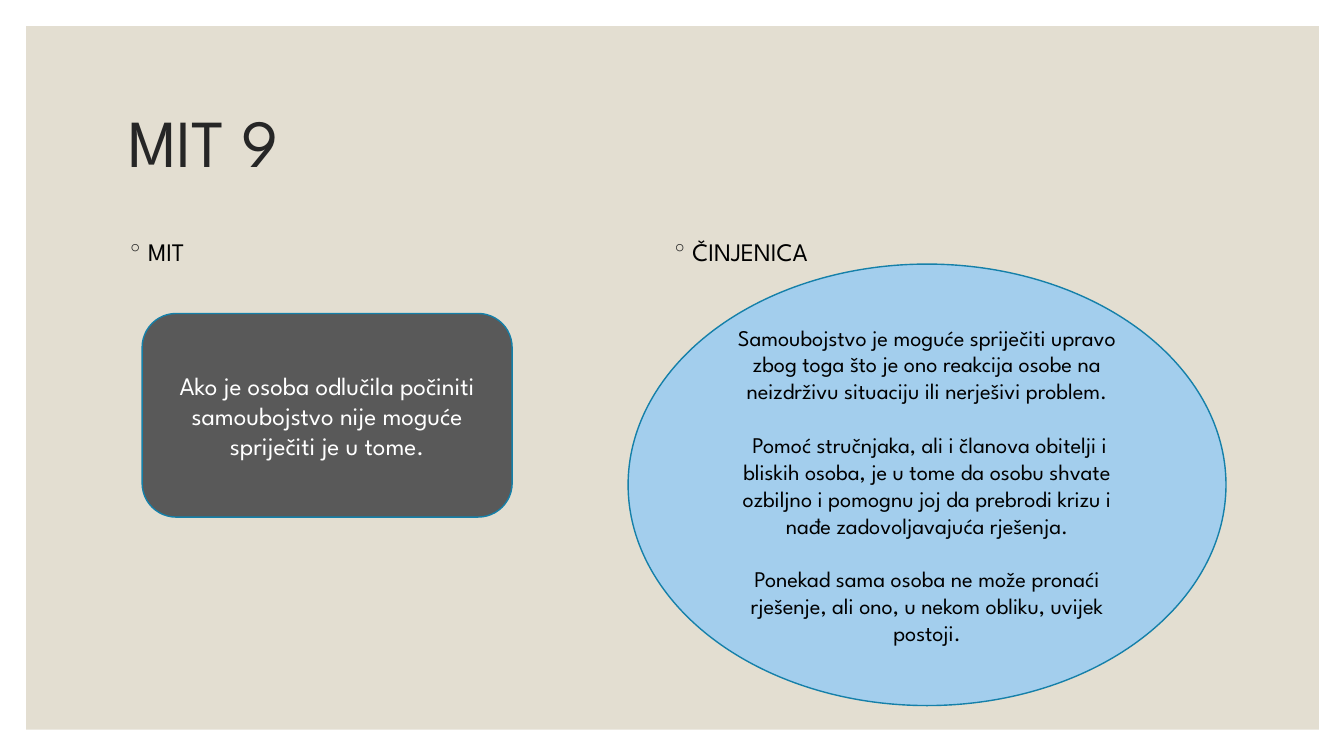
from dataclasses import dataclass

from lxml.etree import SubElement
from pptx import Presentation
from pptx.dml.color import RGBColor
from pptx.enum.shapes import MSO_SHAPE
from pptx.enum.text import MSO_ANCHOR, MSO_AUTO_SIZE, PP_ALIGN
from pptx.oxml.ns import qn
from pptx.shapes.autoshape import Shape
from pptx.slide import Slide
from pptx.text.text import TextFrame
from pptx.util import Inches, Pt

FONT = "League Spartan"
BLACK = RGBColor(0x00, 0x00, 0x00)
WHITE = RGBColor(0xFF, 0xFF, 0xFF)
CHARCOAL = RGBColor(0x26, 0x26, 0x26)
GREY = RGBColor(0x59, 0x59, 0x59)
SAND = RGBColor(0xE3, 0xDE, 0xD1)
SKY = RGBColor(0xA3, 0xCE, 0xED)
TEAL = RGBColor(0x15, 0x80, 0xA9)


@dataclass(frozen=True)
class Box:
    left: float
    top: float
    width: float
    height: float

    def lengths(self) -> tuple[Inches, Inches, Inches, Inches]:
        return (Inches(self.left), Inches(self.top),
                Inches(self.width), Inches(self.height))


@dataclass(frozen=True)
class Heading:
    text: str
    box: Box


@dataclass(frozen=True)
class Bubble:
    outline: MSO_SHAPE
    box: Box
    fill: RGBColor
    color: RGBColor
    size: float
    paragraphs: tuple[str, ...]


PANEL = Box(0.26, 0.26, 12.82, 6.98)
TITLE = Box(1.17, 0.7, 11, 1.5)
HEADINGS = (
    Heading("MIT", Box(1.17, 2.3, 5.4, 0.4)),
    Heading("ČINJENICA", Box(6.57, 2.3, 5.4, 0.4)),
)
BUBBLES = (
    Bubble(MSO_SHAPE.ROUNDED_RECTANGLE, Box(1.41, 3.11, 3.67, 2.02), GREY, WHITE, 18, (
        "Ako je osoba odlučila počiniti samoubojstvo nije moguće spriječiti je u tome.",
    )),
    Bubble(MSO_SHAPE.OVAL, Box(6.23, 2.62, 5.93, 4.38), SKY, BLACK, 16, (
        "Samoubojstvo je moguće spriječiti upravo zbog toga što je ono reakcija osobe "
        "na neizdrživu situaciju ili nerješivi problem.",
        " Pomoć stručnjaka, ali i članova obitelji i bliskih osoba, je u tome da osobu "
        "shvate ozbiljno i pomognu joj da prebrodi krizu i nađe zadovoljavajuća rješenja.",
        "Ponekad sama osoba ne može pronaći rješenje, ali ono, u nekom obliku, "
        "uvijek postoji.",
    )),
)


def format_runs(frame: TextFrame, size: float, color: RGBColor) -> None:
    for paragraph in frame.paragraphs:
        for run in paragraph.runs:
            run.font.name = FONT
            run.font.size = Pt(size)
            run.font.color.rgb = color


def add_filled_shape(slide: Slide, outline: MSO_SHAPE, box: Box, fill: RGBColor) -> Shape:
    shape = slide.shapes.add_shape(outline, *box.lengths())
    shape.shadow.inherit = False
    shape.fill.solid()
    shape.fill.fore_color.rgb = fill
    shape.line.fill.background()
    return shape


def add_title(slide: Slide, text: str) -> None:
    title = slide.shapes.title
    title.left, title.top, title.width, title.height = TITLE.lengths()
    frame = title.text_frame
    frame.text = text
    frame.auto_size = MSO_AUTO_SIZE.NONE
    frame.vertical_anchor = MSO_ANCHOR.MIDDLE
    frame.paragraphs[0].alignment = PP_ALIGN.LEFT
    frame.paragraphs[0].line_spacing = 0.9
    format_runs(frame, 48, CHARCOAL)


def add_heading(slide: Slide, heading: Heading) -> None:
    frame = slide.shapes.add_textbox(*heading.box.lengths()).text_frame
    frame.word_wrap = True
    frame.text = heading.text
    format_runs(frame, 18, BLACK)
    properties = frame.paragraphs[0]._p.get_or_add_pPr()
    properties.set("marL", str(Inches(0.2)))
    properties.set("indent", str(-Inches(0.2)))
    bullet_color = SubElement(properties, qn("a:buClr"))
    SubElement(bullet_color, qn("a:srgbClr"), val=str(CHARCOAL))
    SubElement(properties, qn("a:buFont"), typeface=FONT)
    SubElement(properties, qn("a:buChar"), char="◦")


def add_bubble(slide: Slide, bubble: Bubble) -> None:
    shape = add_filled_shape(slide, bubble.outline, bubble.box, bubble.fill)
    shape.line.color.rgb = TEAL
    shape.line.width = Pt(1)
    frame = shape.text_frame
    frame.word_wrap = True
    frame.vertical_anchor = MSO_ANCHOR.MIDDLE
    frame.text = "\n".join(bubble.paragraphs)
    for index, paragraph in enumerate(frame.paragraphs):
        paragraph.alignment = PP_ALIGN.CENTER
        if index:
            paragraph.space_before = Pt(1.2 * bubble.size)
    format_runs(frame, bubble.size, bubble.color)


def main() -> None:
    presentation = Presentation()
    presentation.slide_width = Inches(13.33)
    presentation.slide_height = Inches(7.5)
    slide = presentation.slides.add_slide(presentation.slide_layouts[5])
    slide.background.fill.solid()
    slide.background.fill.fore_color.rgb = WHITE

    panel = add_filled_shape(slide, MSO_SHAPE.RECTANGLE, PANEL, SAND)
    slide.shapes.title.element.addprevious(panel.element)
    add_title(slide, "MIT 9")
    for heading in HEADINGS:
        add_heading(slide, heading)
    for bubble in BUBBLES:
        add_bubble(slide, bubble)
    presentation.save("out.pptx")


if __name__ == "__main__":
    main()
